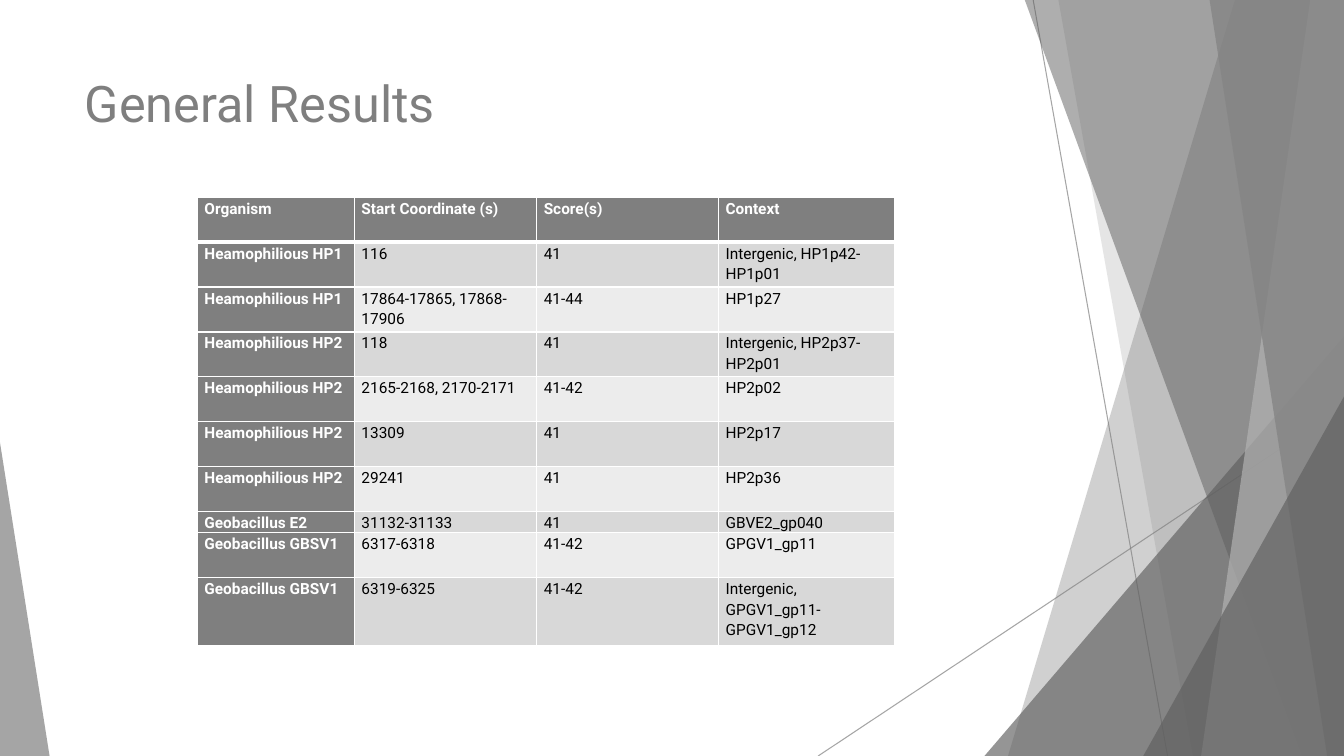
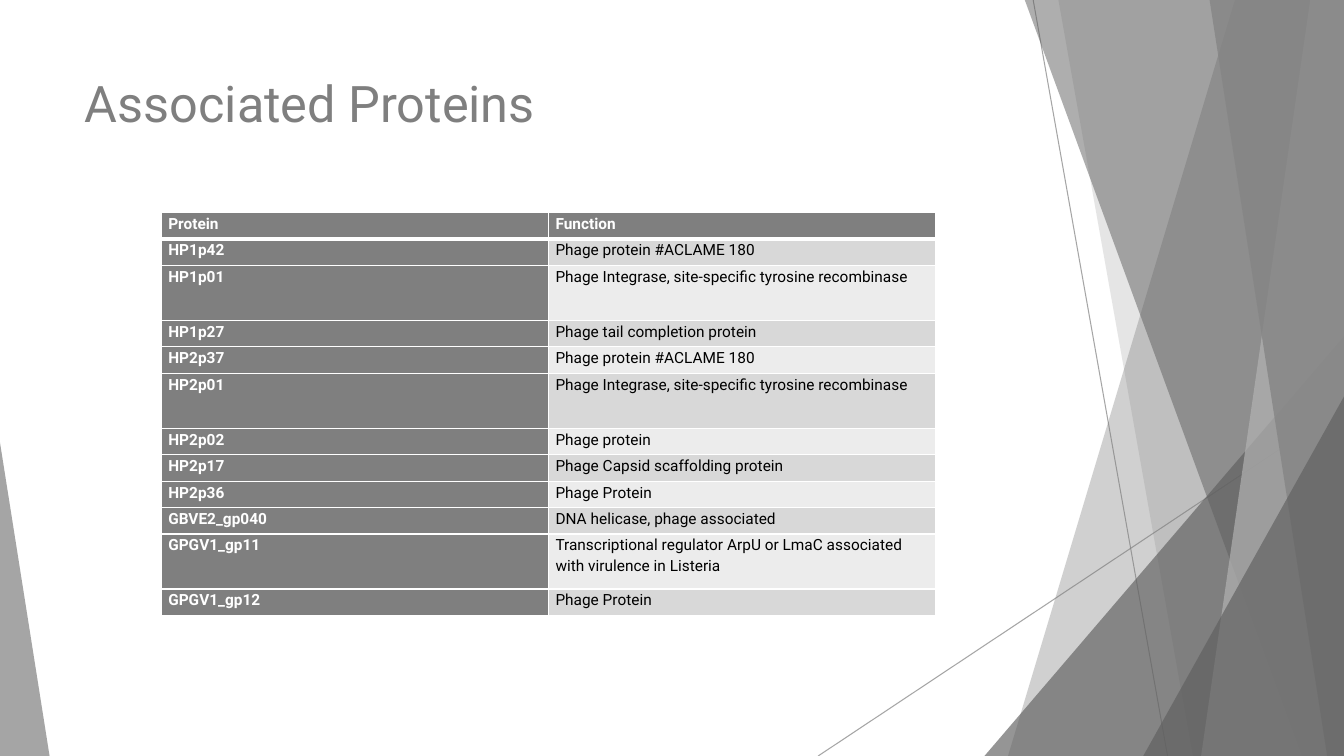
from pptx import Presentation
from pptx.dml.color import RGBColor
from pptx.enum.shapes import MSO_CONNECTOR, MSO_SHAPE
from pptx.enum.text import MSO_ANCHOR, MSO_AUTO_SIZE, PP_ALIGN
from pptx.oxml.ns import qn
from pptx.util import Inches, Pt
from lxml.etree import SubElement

COLUMNS, ROWS = 160, 90
UNIT = Inches(1 / 12)
FONT = "Roboto"
GREY = RGBColor(0x7F, 0x7F, 0x7F)
DARK_GREY = RGBColor(0x5F, 0x5F, 0x5F)
MID_GREY = RGBColor(0x85, 0x85, 0x85)
LIGHT_GREY = RGBColor(0xB2, 0xB2, 0xB2)
STRIPES = (RGBColor(0xEC, 0xEC, 0xEC), RGBColor(0xD8, 0xD8, 0xD8))
WHITE = RGBColor(0xFF, 0xFF, 0xFF)
BLACK = RGBColor(0, 0, 0)

RESULTS = [
    ("Organism", "Start Coordinate (s)", "Score(s)", "Context"),
    ("Heamophilious HP1", "116", "41", "Intergenic, HP1p42-HP1p01"),
    ("Heamophilious HP1", "17864-17865, 17868-17906", "41-44", "HP1p27"),
    ("Heamophilious HP2", "118", "41", "Intergenic, HP2p37-HP2p01"),
    ("Heamophilious HP2", "2165-2168, 2170-2171", "41-42", "HP2p02"),
    ("Heamophilious HP2", "13309", "41", "HP2p17"),
    ("Heamophilious HP2", "29241", "41", "HP2p36"),
    ("Geobacillus E2", "31132-31133", "41", "GBVE2_gp040"),
    ("Geobacillus GBSV1", "6317-6318", "41-42", "GPGV1_gp11"),
    ("Geobacillus GBSV1", "6319-6325", "41-42", "Intergenic, GPGV1_gp11- GPGV1_gp12"),
]
PROTEINS = [
    ("Protein", "Function"),
    ("HP1p42", "Phage protein #ACLAME 180"),
    ("HP1p01", "Phage Integrase, site-specific tyrosine recombinase"),
    ("HP1p27", "Phage tail completion protein"),
    ("HP2p37", "Phage protein #ACLAME 180"),
    ("HP2p01", "Phage Integrase, site-specific tyrosine recombinase"),
    ("HP2p02", "Phage protein"),
    ("HP2p17", "Phage Capsid scaffolding protein"),
    ("HP2p36", "Phage Protein"),
    ("GBVE2_gp040", "DNA helicase, phage associated"),
    ("GPGV1_gp11", "Transcriptional regulator ArpU or LmaC associated with virulence in Listeria"),
    ("GPGV1_gp12", "Phage Protein"),
]


def grid(*lengths):
    """Turn grid columns or rows into slide lengths."""
    return [round(length * UNIT) for length in lengths]


def set_opacity(shape, percent):
    for colour in shape.element.iter(qn("a:srgbClr")):
        SubElement(colour, qn("a:alpha"), val=str(percent * 1000))


class Deck:
    """Holds the shared style and the slide being filled."""

    def __init__(self):
        self.presentation = Presentation()
        self.presentation.slide_width, self.presentation.slide_height = grid(COLUMNS, ROWS)
        self.layout = self.presentation.slide_layouts.get_by_name("Title Only")
        for placeholder in list(self.layout.placeholders):
            if placeholder.placeholder_format.idx:
                placeholder.element.getparent().remove(placeholder.element)
            else:
                (placeholder.left, placeholder.top,
                 placeholder.width, placeholder.height) = grid(8.9, 8, 112.8, 17.3)
        self.slide = None

    def add_slide(self, title):
        self.slide = self.presentation.slides.add_slide(self.layout)
        frame = self.slide.shapes.title.text_frame
        frame.vertical_anchor = MSO_ANCHOR.TOP
        frame.auto_size = MSO_AUTO_SIZE.NONE
        frame.paragraphs[0].alignment = PP_ALIGN.LEFT
        self.add_run(frame.paragraphs[0], title, 36, GREY)

    def add_run(self, paragraph, text, size, colour, bold=False):
        run = paragraph.add_run()
        run.text = text
        run.font.name, run.font.size, run.font.bold = FONT, Pt(size), bold
        run.font.color.rgb = colour

    def paint(self, shape, colour, opacity):
        shape.shadow.inherit = False
        shape.fill.solid()
        shape.fill.fore_color.rgb = colour
        shape.line.fill.background()
        set_opacity(shape, opacity)

    def add_line(self, *ends):
        line = self.slide.shapes.add_connector(MSO_CONNECTOR.STRAIGHT, *grid(*ends))
        line.line.color.rgb = GREY
        line.line.width = Pt(0.75)
        SubElement(line.element.spPr, qn("a:effectLst"))
        set_opacity(line, 70)

    def add_band(self, top, bottom, colour, opacity):
        """Fill from a slanted left edge to the right edge of the slide."""
        builder = self.slide.shapes.build_freeform(top, 0, scale=UNIT)
        builder.add_line_segments([(COLUMNS, 0), (COLUMNS, ROWS), (bottom, ROWS)])
        self.paint(builder.convert_to_shape(), colour, opacity)

    def add_triangle(self, left, top, right, apex, colour, opacity):
        """Stand a triangle on the bottom edge; apex is a share of its width."""
        triangle = self.slide.shapes.add_shape(
            MSO_SHAPE.ISOSCELES_TRIANGLE, *grid(left, top, right - left, ROWS - top))
        triangle.adjustments[0] = apex
        self.paint(triangle, colour, opacity)

    def add_backdrop(self):
        """Draw the facets and move them to the layout, so every slide has them."""
        self.add_line(123, 0, 139, ROWS)
        self.add_line(COLUMNS, 48.4, 97.4, ROWS)
        self.add_band(147.4, 120.5, GREY, 36)
        self.add_band(126, 142, GREY, 20)
        self.add_triangle(117.2, 40, COLUMNS, 1, DARK_GREY, 66)
        self.add_band(122.5, 154.9, DARK_GREY, 50)
        self.add_band(156.4, 143, LIGHT_GREY, 70)
        self.add_band(143.5, 158.2, MID_GREY, 80)
        self.add_triangle(136.1, 47.2, COLUMNS, 1, DARK_GREY, 66)
        self.add_triangle(0, 52.7, 5.9, 0, GREY, 70)
        for shape in list(self.slide.shapes):
            if not shape.is_placeholder:
                self.layout.shapes.element.append(shape.element)

    def add_borders(self, cell, widths):
        properties = cell._tc.get_or_add_tcPr()
        for side, width in widths.items():
            border = SubElement(properties, qn(f"a:ln{side}"), w=str(Pt(width)))
            fill = SubElement(border, qn("a:solidFill"))
            SubElement(fill, qn("a:srgbClr"), val=str(WHITE))

    def fill_cell(self, cell, text, row, column):
        if row == 0:
            self.add_borders(cell, {"L": 1, "R": 1, "T": 1, "B": 3})
        else:
            self.add_borders(cell, {"L": 1, "R": 1, "B": 1})
        heading = row == 0 or column == 0
        cell.fill.solid()
        cell.fill.fore_color.rgb = GREY if heading else STRIPES[row % 2]
        cell.margin_left = cell.margin_right = Inches(0.07)
        cell.margin_top = cell.margin_bottom = 0
        paragraph = cell.text_frame.paragraphs[0]
        paragraph.line_spacing = 1.15
        self.add_run(paragraph, text, 11, WHITE if heading else BLACK, heading)

    def add_table(self, left, top, widths, heights, records):
        table = self.slide.shapes.add_table(
            len(heights), len(widths), *grid(left, top, sum(widths), sum(heights))).table
        for column, width in zip(table.columns, grid(*widths)):
            column.width = width
        for row, height in zip(table.rows, grid(*heights)):
            row.height = height
        for row, record in enumerate(records):
            for column, text in enumerate(record):
                self.fill_cell(table.cell(row, column), text, row, column)


def main():
    deck = Deck()
    deck.add_slide("General Results")
    deck.add_backdrop()
    deck.add_table(23.5, 23.5, [18.7, 21.7, 21.65, 20.9],
                   [5.34] * 7 + [2.56, 5.34, 8.1], RESULTS)

    deck.add_slide("Associated Proteins")
    tall_rows = (2, 5, 10)
    heights = [6.55 if row in tall_rows else 3.15 for row in range(len(PROTEINS))]
    deck.add_table(19.2, 25.3, [46.1] * 2, heights, PROTEINS)
    deck.presentation.save("out.pptx")


if __name__ == "__main__":
    main()
